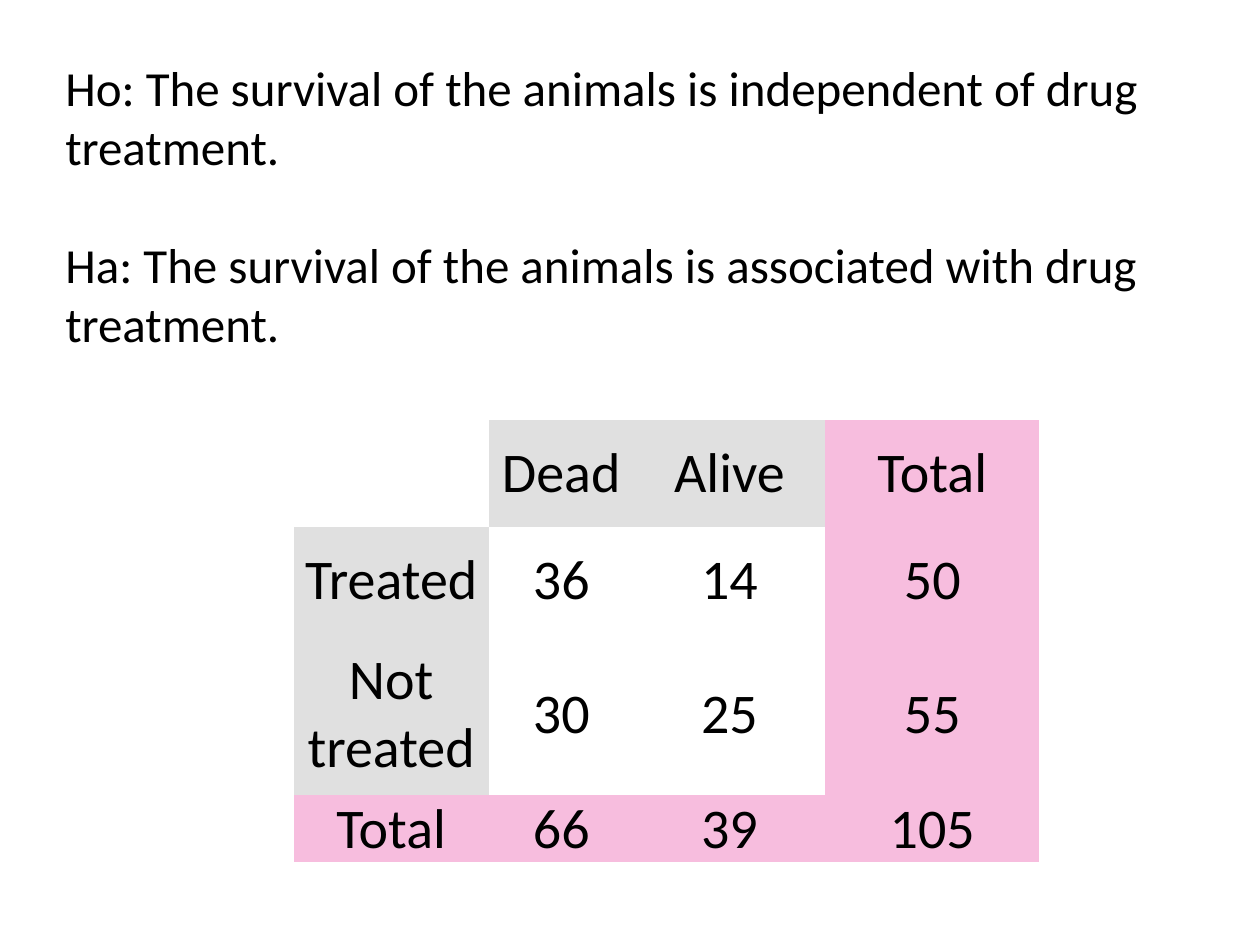
from pptx import Presentation
from pptx.dml.color import RGBColor
from pptx.enum.text import MSO_ANCHOR, PP_ALIGN
from pptx.oxml.ns import qn
from pptx.util import Inches, Pt

MIDDLE = MSO_ANCHOR.MIDDLE
CENTER = PP_ALIGN.CENTER
BLACK, WHITE, GREY, PINK = "000000", "FFFFFF", "E0E0E0", "F7BDDE"
NO_STYLE_NO_GRID = "{2D5ABB26-0587-4C30-8999-92F81FD0307C}"


def color(value):
    return RGBColor.from_string(value)


def set_font(para, size):
    para.font.name = "Calibri"
    para.font.size = Pt(size)
    para.font.color.rgb = color(BLACK)


deck = Presentation()
deck.slide_width, deck.slide_height = Inches(10), Inches(7.5)
page = deck.slides.add_slide(deck.slide_layouts[6])

# Hypotheses, one line height apart
hypotheses = [
    "Ho: The survival of the animals is independent of drug treatment.",
    "Ha: The survival of the animals is associated with drug treatment.",
]
box = page.shapes.add_textbox(Inches(0.42), Inches(0.41), Inches(8.92), Inches(2.93))
frame = box.text_frame
frame.word_wrap = True
frame.text = "\n".join(hypotheses)
for para in frame.paragraphs:
    set_font(para, 28)
frame.paragraphs[0].space_after = Pt(34)

# Contingency table
counts = [
    ["", "Dead", "Alive", "Total"],
    ["Treated", "36", "14", "50"],
    ["Not treated", "30", "25", "55"],
    ["Total", "66", "39", "105"],
]
column_widths = [1.55, 1.15, 1.52, 1.7]
row_heights = [0.85, 0.85, 1.28, 0.43]
last_row, last_column = len(row_heights) - 1, len(column_widths) - 1
table = page.shapes.add_table(
    len(row_heights), len(column_widths), Inches(2.33), Inches(3.33),
    Inches(sum(column_widths)), Inches(sum(row_heights)),
).table
table.first_row = table.horz_banding = False
table._tbl.tblPr.find(qn("a:tableStyleId")).text = NO_STYLE_NO_GRID
for column, width in zip(table.columns, column_widths):
    column.width = Inches(width)
for row, height in zip(table.rows, row_heights):
    row.height = Inches(height)

# Totals are pink, headings grey, the rest white
for r, values in enumerate(counts):
    for c, value in enumerate(values):
        cell = table.cell(r, c)
        if r == last_row or c == last_column:
            shade = PINK
        elif (r == 0) != (c == 0):
            shade = GREY
        else:
            shade = WHITE
        cell.fill.solid()
        cell.fill.fore_color.rgb = color(shade)
        cell.margin_left = cell.margin_right = 0
        cell.margin_top = cell.margin_bottom = 0
        cell.vertical_anchor = MIDDLE
        if value:
            cell.text = value
            para = cell.text_frame.paragraphs[0]
            para.alignment = CENTER
            set_font(para, 32)

deck.save("out.pptx")
